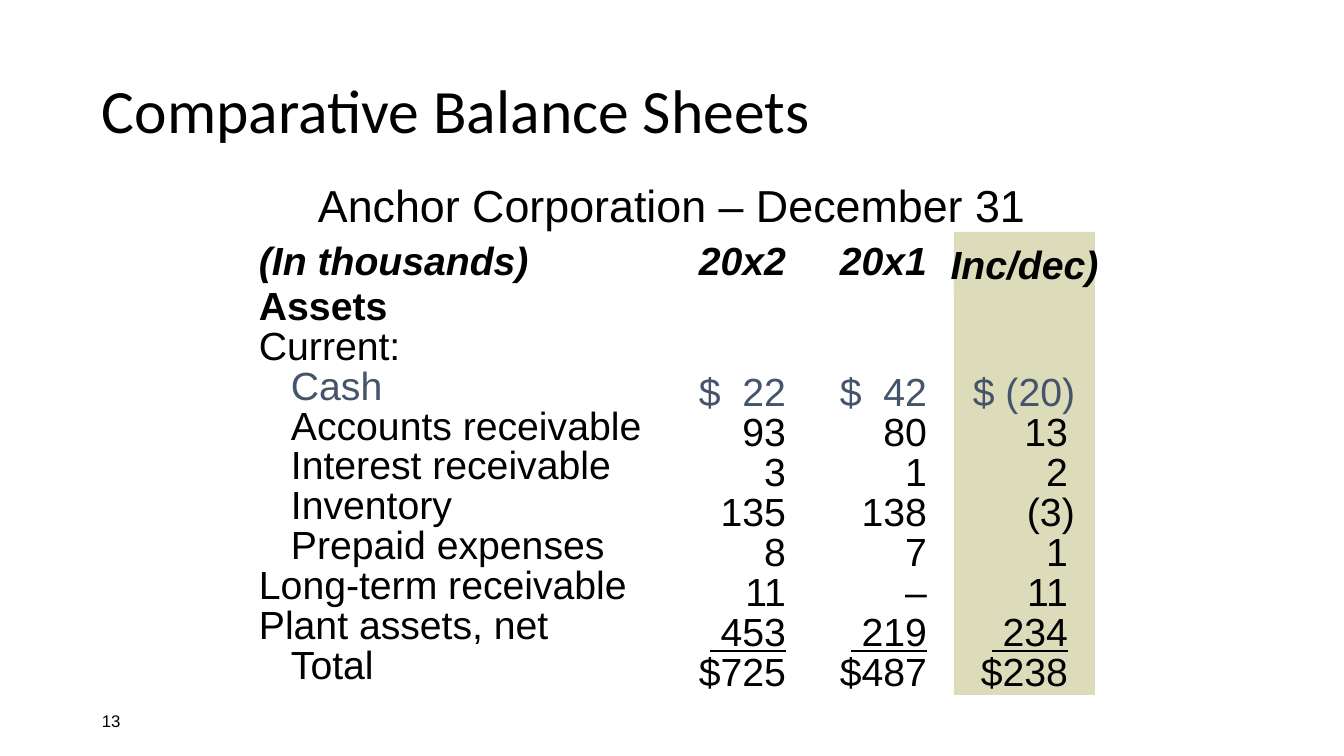
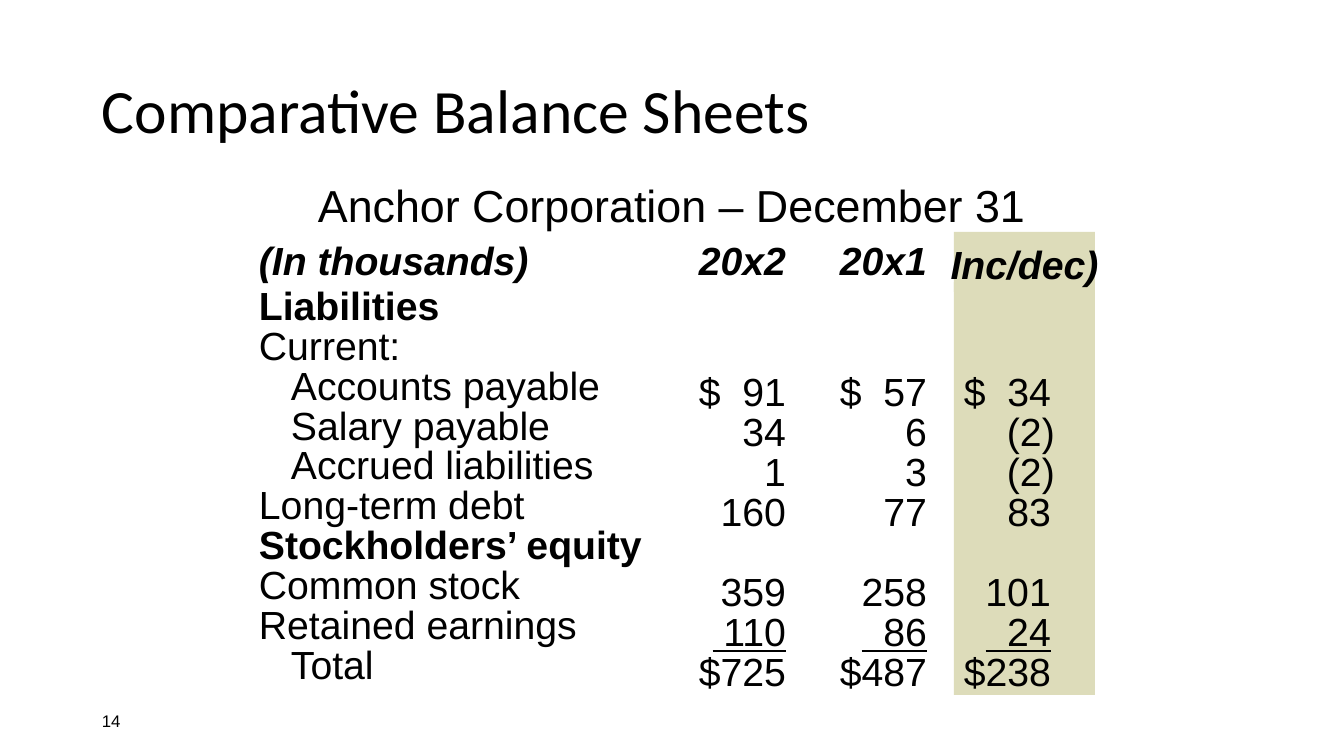
from dataclasses import dataclass

from lxml import etree
from pptx import Presentation
from pptx import util as u
from pptx.dml.color import RGBColor
from pptx.enum import shapes, text
from pptx.oxml.ns import qn

SLIDE_W, SLIDE_H = 1344, 756
EMU_PER_PX = 12192000 / SLIDE_W
COLORS = {"ink": "000000", "cash": "44546A", "change": "DDDCBA"}
BODY_FONT, TITLE_FONT = "Arial", "Calibri"
PLAIN_TABLE = "{2D5ABB26-0587-4C30-8999-92F81FD0307C}"
FIGURE_SPACE = " "  # as wide as one digit

# Balance sheet grid
GRID_LEFT, GRID_TOP = 249, 232
LABEL_W, AMOUNT_W = 423, 141
HEADER_H, ROW_H = 63, 40
LABEL_INSET, INDENT = 10, 32
AMOUNT_INSET, AMOUNT_SPAN = 27, 87
HEADINGS = ("(In thousands)", "20x2", "20x1")
CHANGE_HEADING, CHANGE_COLUMN = "Inc/dec)", 3


@dataclass(frozen=True)
class Style:
    size: int = 28
    font: str = BODY_FONT
    color: str = "ink"
    bold: bool = False
    italic: bool = False
    underline: bool = False


HEADING_STYLE = Style(bold=True, italic=True)


@dataclass(frozen=True)
class Row:
    label: str
    amounts: tuple[str, ...] = ()
    indented: bool = False
    bold: bool = False
    color: str = "ink"
    ruled: bool = False


@dataclass(frozen=True)
class Sheet:
    number: int
    change_inset: int
    change_span: int
    bracket_overhang: int
    rows: tuple[Row, ...]


SHEETS = (
    Sheet(13, 19, 95, 7, (
        Row("Assets", bold=True),
        Row("Current:"),
        Row("Cash", ("$\t22", "$\t42", "$ (20)"), indented=True, color="cash"),
        Row("Accounts receivable", ("93", "80", "13"), indented=True),
        Row("Interest receivable", ("3", "1", "2"), indented=True),
        Row("Inventory", ("135", "138", "(3)"), indented=True),
        Row("Prepaid expenses", ("8", "7", "1"), indented=True),
        Row("Long-term receivable", ("11", "–", "11")),
        Row("Plant assets, net", ("453", "219", "234"), ruled=True),
        Row("Total", ("$725", "$487", "$238"), indented=True),
    )),
    Sheet(14, 10, 87, 4, (
        Row("Liabilities", bold=True),
        Row("Current:"),
        Row("Accounts payable", ("$\t91", "$\t57", "$\t34"), indented=True),
        Row("Salary payable", ("34", "6", "(2)"), indented=True),
        Row("Accrued liabilities", ("1", "3", "(2)"), indented=True),
        Row("Long-term debt", ("160", "77", "83")),
        Row("Stockholders’ equity", bold=True),
        Row("Common stock", ("359", "258", "101")),
        Row("Retained earnings", ("110", "86", "24"), ruled=True),
        Row("Total", ("$725", "$487", "$238"), indented=True),
    )),
)


def px(n: int) -> int:
    return u.Emu(round(n * EMU_PER_PX))


def write(paragraph, words: str, style: Style, spacing: float = 1.0,
          align=text.PP_ALIGN.LEFT) -> None:
    paragraph.alignment = align
    paragraph.line_spacing = spacing
    run = paragraph.add_run()
    run.text = words
    font = run.font
    font.name, font.size = style.font, u.Pt(style.size)
    font.bold, font.italic, font.underline = style.bold, style.italic, style.underline
    font.color.rgb = RGBColor.from_string(COLORS[style.color])


def text_box(slide, left: int, top: int, width: int, height: int, words: str,
             style: Style, spacing: float = 1.0, align=text.PP_ALIGN.LEFT,
             anchor=text.MSO_ANCHOR.MIDDLE) -> None:
    frame = slide.shapes.add_textbox(px(left), px(top), px(width), px(height)).text_frame
    frame.word_wrap = True
    frame.vertical_anchor = anchor
    write(frame.paragraphs[0], words, style, spacing, align)


def change_band(slide, top: int, height: int):
    left = GRID_LEFT + LABEL_W + AMOUNT_W * (CHANGE_COLUMN - 1)
    band = slide.shapes.add_shape(shapes.MSO_SHAPE.RECTANGLE, px(left), px(top),
                                  px(AMOUNT_W), px(height))
    band.shadow.inherit = False
    band.line.fill.background()
    band.fill.solid()
    band.fill.fore_color.rgb = RGBColor.from_string(COLORS["change"])
    return band


def add_change_bands(slide) -> None:
    change_band(slide, 282, 413)
    # The heading is slightly wider than its band, so it must not wrap
    frame = change_band(slide, GRID_TOP, 60).text_frame
    frame.word_wrap = False
    frame.vertical_anchor = text.MSO_ANCHOR.TOP
    frame.margin_top = px(8)
    write(frame.paragraphs[0], CHANGE_HEADING, HEADING_STYLE, align=text.PP_ALIGN.CENTER)


def set_insets(cell, left: int, top: int = 0, bottom: int = 0) -> None:
    cell.margin_left, cell.margin_top, cell.margin_bottom = px(left), px(top), px(bottom)
    cell.margin_right = 0


def right_tab(paragraph, position: int) -> None:
    stops = etree.SubElement(paragraph._p.get_or_add_pPr(), qn("a:tabLst"))
    etree.SubElement(stops, qn("a:tab"), pos=str(px(position)), algn="r")


def fill_header(table) -> None:
    for column, heading in enumerate(HEADINGS):
        cell = table.cell(0, column)
        set_insets(cell, 0 if column else LABEL_INSET, 8)
        align = text.PP_ALIGN.CENTER if column else text.PP_ALIGN.LEFT
        write(cell.text_frame.paragraphs[0], heading, HEADING_STYLE, align=align)


def fill_row(table, index: int, row: Row, sheet: Sheet) -> None:
    label = table.cell(index, 0)
    set_insets(label, LABEL_INSET + INDENT * row.indented)
    label.vertical_anchor = text.MSO_ANCHOR.TOP
    write(label.text_frame.paragraphs[0], row.label,
          Style(color=row.color, bold=row.bold), 0.72)
    for column, amount in enumerate(row.amounts, start=1):
        inset, span = AMOUNT_INSET, AMOUNT_SPAN
        if column == CHANGE_COLUMN:
            inset, span = sheet.change_inset, sheet.change_span
        if amount.endswith(")"):
            span += sheet.bracket_overhang
        if row.ruled:
            # Pad so that the rule is as wide as the total below it
            amount = amount.rjust(4, FIGURE_SPACE)
        cell = table.cell(index, column)
        set_insets(cell, inset, bottom=2)
        cell.vertical_anchor = text.MSO_ANCHOR.BOTTOM
        paragraph = cell.text_frame.paragraphs[0]
        right_tab(paragraph, span)
        words = amount if "\t" in amount else "\t" + amount
        write(paragraph, words, Style(color=row.color, underline=row.ruled), 0.72)


def add_balance_table(slide, sheet: Sheet) -> None:
    widths = (LABEL_W,) + (AMOUNT_W,) * 3
    heights = (HEADER_H,) + (ROW_H,) * len(sheet.rows)
    table = slide.shapes.add_table(
        len(heights), len(widths), px(GRID_LEFT), px(GRID_TOP),
        px(sum(widths)), px(sum(heights))).table
    table.horz_banding = False
    table._tbl.tblPr.find(qn("a:tableStyleId")).text = PLAIN_TABLE
    for column, width in zip(table.columns, widths):
        column.width = px(width)
    for line, height in zip(table.rows, heights):
        line.height = px(height)
        for cell in line.cells:
            set_insets(cell, 0)
            cell.fill.background()
    fill_header(table)
    for index, row in enumerate(sheet.rows, start=1):
        fill_row(table, index, row, sheet)


def add_sheet(deck, sheet: Sheet) -> None:
    slide = deck.slides.add_slide(deck.slide_layouts[6])
    # Page number, title and subtitle
    text_box(slide, 92, 701, 302, 40, str(sheet.number), Style(12))
    text_box(slide, 92, 41, 1159, 146, "Comparative Balance Sheets",
             Style(44, TITLE_FONT), 0.9)
    text_box(slide, GRID_LEFT, 181, 846, 50, "Anchor Corporation – December 31",
             Style(32), 0.85, text.PP_ALIGN.CENTER, text.MSO_ANCHOR.TOP)
    # Balance sheet over its shaded change column
    add_change_bands(slide)
    add_balance_table(slide, sheet)


def main() -> None:
    deck = Presentation()
    deck.slide_width, deck.slide_height = px(SLIDE_W), px(SLIDE_H)
    for sheet in SHEETS:
        add_sheet(deck, sheet)
    deck.save("out.pptx")


if __name__ == "__main__":
    main()
